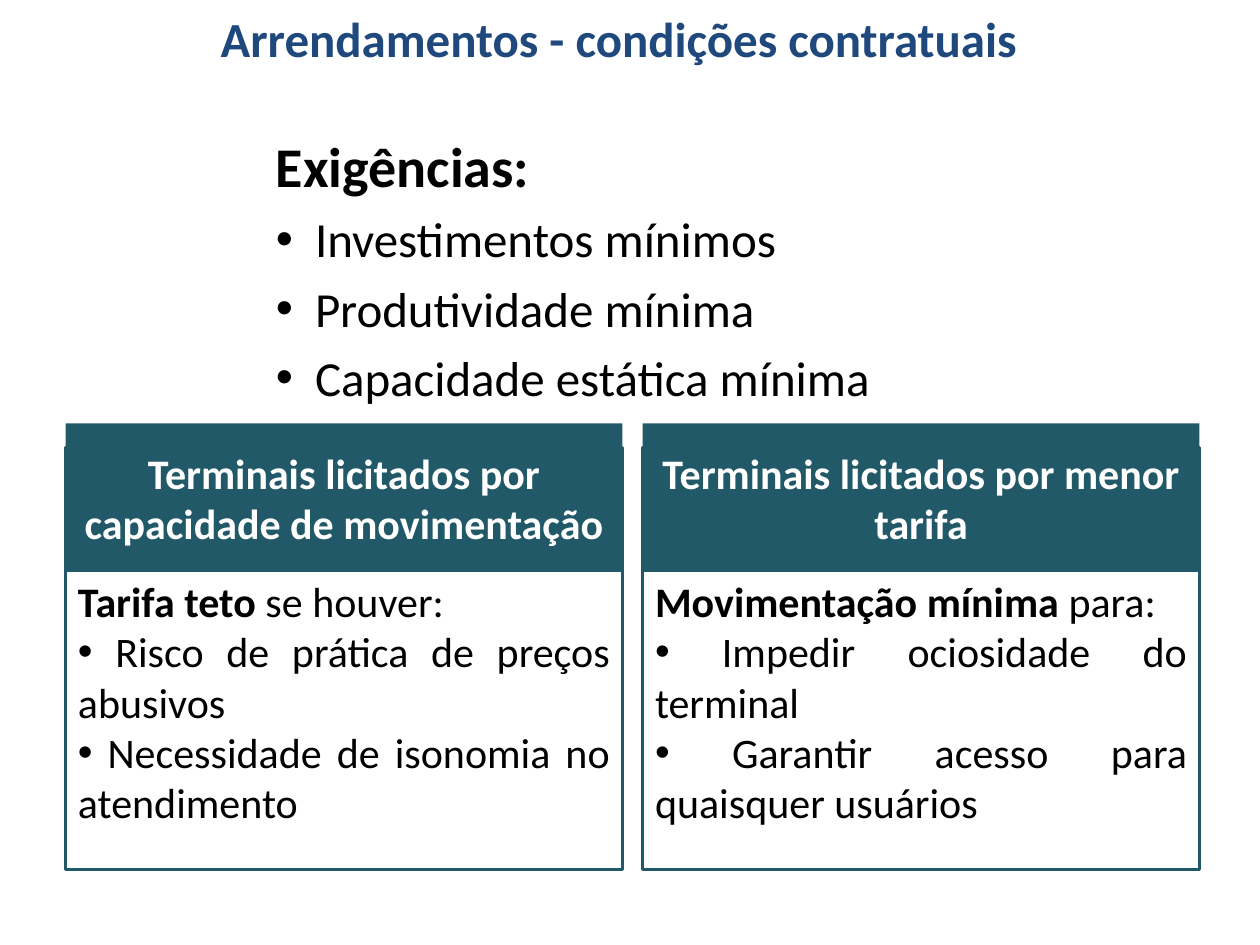
from dataclasses import dataclass

from lxml import etree
from pptx import Presentation
from pptx.dml.color import RGBColor
from pptx.enum.shapes import MSO_SHAPE
from pptx.enum.text import MSO_ANCHOR, MSO_AUTO_SIZE, PP_ALIGN
from pptx.oxml.ns import qn
from pptx.util import Inches, Pt

RECT = MSO_SHAPE.RECTANGLE
TOP, MIDDLE = MSO_ANCHOR.TOP, MSO_ANCHOR.MIDDLE
LEFT, CENTER, JUSTIFY = PP_ALIGN.LEFT, PP_ALIGN.CENTER, PP_ALIGN.JUSTIFY
NO_FIT = MSO_AUTO_SIZE.NONE

TEAL = RGBColor(0x21, 0x59, 0x68)
NAVY = RGBColor(0x1F, 0x49, 0x7D)
BLACK = RGBColor(0, 0, 0)
WHITE = RGBColor(0xFF, 0xFF, 0xFF)
FONT = "Calibri"

EDGE, WIDE, GAP = 0.52, 4.42, 0.16


@dataclass
class Panel:
    head: str
    term: str
    rest: str
    points: list[str]


PANELS = [
    Panel(
        "Terminais licitados por capacidade de movimentação",
        "Tarifa teto ",
        "se houver:",
        [" Risco de prática de preços abusivos", " Necessidade de isonomia no atendimento"],
    ),
    Panel(
        "Terminais licitados por menor tarifa",
        "Movimentação mínima ",
        "para:",
        [" Impedir ociosidade do terminal", " Garantir acesso para quaisquer usuários"],
    ),
]
NEEDS = ["Investimentos mínimos", "Produtividade mínima", "Capacidade estática mínima"]


def place(shape, left: float, top: float, width: float, height: float) -> None:
    shape.left, shape.top = Inches(left), Inches(top)
    shape.width, shape.height = Inches(width), Inches(height)


def add_run(para, text: str, size: int, color: RGBColor, bold: bool = False) -> None:
    run = para.add_run()
    run.text = text
    font = run.font
    font.name, font.size, font.bold = FONT, Pt(size), bold
    font.color.rgb = color


def set_mark(para, mark: str = "", hang: float = 0) -> None:
    props = para._p.get_or_add_pPr()
    props.set("marL", str(Inches(hang)))
    props.set("indent", str(-Inches(hang)))
    if mark:
        etree.SubElement(props, qn("a:buFont"), typeface="Arial")
        etree.SubElement(props, qn("a:buChar"), char=mark)
    else:
        etree.SubElement(props, qn("a:buNone"))


def add_box(slide, left: float, top: float, height: float):
    box = slide.shapes.add_shape(
        RECT, Inches(left), Inches(top), Inches(WIDE), Inches(height)
    )
    box.shadow.inherit = False
    box.text_frame.word_wrap = True
    box.text_frame.vertical_anchor = MIDDLE
    return box


def draw_title(slide) -> None:
    title = slide.shapes.title
    place(title, 0.41, 0.01, 9, 0.59)
    frame = title.text_frame
    frame.auto_size, frame.vertical_anchor = NO_FIT, MIDDLE
    frame.margin_left = frame.margin_right = Inches(0.06)
    frame.margin_top = frame.margin_bottom = Inches(0.01)
    para = frame.paragraphs[0]
    para.alignment = CENTER
    add_run(para, "Arrendamentos - condições contratuais", 28, NAVY, True)


def draw_needs(slide) -> None:
    body = slide.placeholders[1]
    place(body, 2.09, 0.99, 6.77, 2.31)
    frame = body.text_frame
    frame.auto_size, frame.vertical_anchor = NO_FIT, TOP
    para = frame.paragraphs[0]
    set_mark(para)
    add_run(para, "Exigências:", 32, BLACK, True)
    for need in NEEDS:
        para = frame.add_paragraph()
        set_mark(para, "•", 0.31)
        add_run(para, need, 28, BLACK)
    for para in frame.paragraphs:
        para.space_before, para.space_after = Pt(0), Pt(6)


def draw_panel(slide, panel: Panel, left: float) -> None:
    box = add_box(slide, left, 3.55, 3.35)
    box.fill.background()
    box.line.color.rgb, box.line.width = TEAL, Pt(2)
    frame = box.text_frame
    frame.margin_top = Inches(0.73)
    para = frame.paragraphs[0]
    para.alignment = LEFT
    add_run(para, panel.term, 24, BLACK, True)
    add_run(para, panel.rest, 24, BLACK)
    for point in panel.points:
        para = frame.add_paragraph()
        para.alignment = JUSTIFY
        set_mark(para, "•")
        add_run(para, point, 24, BLACK)

    head = add_box(slide, left, 3.36, 1.18)
    head.fill.solid()
    head.fill.fore_color.rgb = TEAL
    head.line.fill.background()
    para = head.text_frame.paragraphs[0]
    para.alignment = CENTER
    add_run(para, panel.head, 24, WHITE, True)


def main() -> None:
    deck = Presentation()
    deck.slide_width, deck.slide_height = Inches(10), Inches(7.5)
    slide = deck.slides.add_slide(deck.slide_layouts[1])
    draw_title(slide)
    draw_needs(slide)
    for col, panel in enumerate(PANELS):
        draw_panel(slide, panel, EDGE + col * (WIDE + GAP))
    deck.save("out.pptx")


if __name__ == "__main__":
    main()
